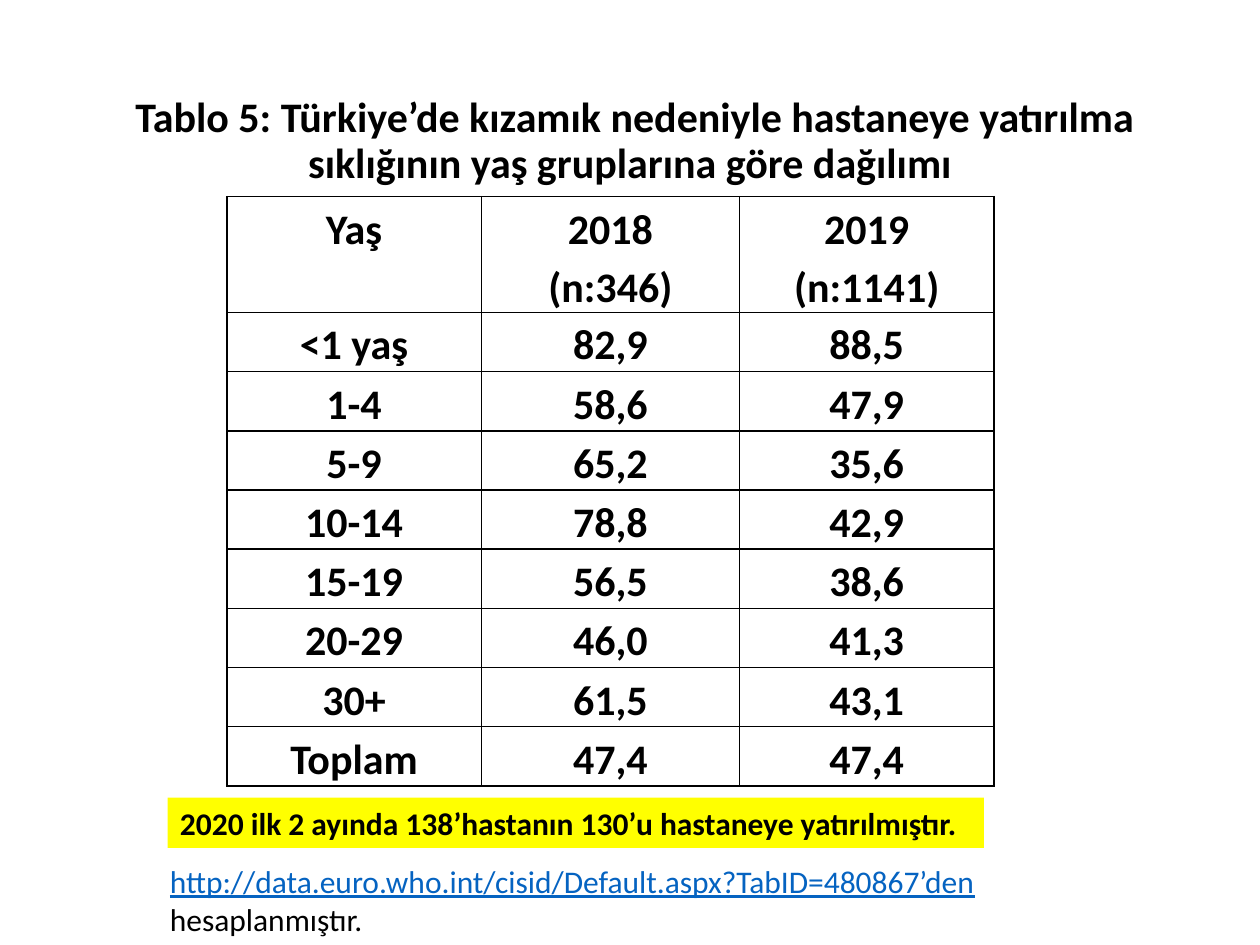
"""Builds the slide on measles hospitalisation in Türkiye by age group."""
from lxml import etree
from pptx import Presentation
from pptx.dml.color import RGBColor
from pptx.enum.shapes import MSO_SHAPE
from pptx.enum.text import MSO_ANCHOR, PP_ALIGN
from pptx.oxml.ns import qn
from pptx.util import Inches, Pt

BLACK = RGBColor(0x00, 0x00, 0x00)
YELLOW = RGBColor(0xFF, 0xFF, 0x00)
LINK = RGBColor(0x05, 0x63, 0xC1)

ROWS = [
    ("Yaş", "2018\n(n:346)", "2019\n(n:1141)"),
    ("<1 yaş", "82,9", "88,5"),
    ("1-4", "58,6", "47,9"),
    ("5-9", "65,2", "35,6"),
    ("10-14", "78,8", "42,9"),
    ("15-19", "56,5", "38,6"),
    ("20-29", "46,0", "41,3"),
    ("30+", "61,5", "43,1"),
    ("Toplam", "47,4", "47,4"),
]
COL_WIDTHS = (2.02, 2.05, 2.02)
ROW_HEIGHT = 0.47


def style(tf, size, bold, align=PP_ALIGN.LEFT, spacing=1.0):
    for p in tf.paragraphs:
        p.alignment = align
        p.line_spacing = spacing
        for r in p.runs:
            r.font.name = "Calibri"
            r.font.size = Pt(size)
            r.font.bold = bold
            r.font.color.rgb = BLACK


def add_borders(cell):
    tcPr = cell._tc.get_or_add_tcPr()
    for i, side in enumerate(("a:lnL", "a:lnR", "a:lnT", "a:lnB")):
        ln = etree.Element(qn(side), w=str(Pt(1)))
        fill = etree.SubElement(ln, qn("a:solidFill"))
        etree.SubElement(fill, qn("a:srgbClr"), val=str(BLACK))
        tcPr.insert(i, ln)


prs = Presentation()
prs.slide_width = Inches(10)
prs.slide_height = Inches(7.5)
s = prs.slides.add_slide(prs.slide_layouts[6])

title = s.shapes.add_textbox(Inches(0.69), Inches(0.4), Inches(8.62), Inches(1.45))
tf = title.text_frame
tf.word_wrap = True
tf.vertical_anchor = MSO_ANCHOR.MIDDLE
tf.text = (" Tablo 5: Türkiye’de kızamık nedeniyle hastaneye yatırılma "
           "sıklığının yaş gruplarına göre dağılımı")
style(tf, 24, True, PP_ALIGN.CENTER, 0.9)

table = s.shapes.add_table(
    len(ROWS), len(COL_WIDTHS), Inches(1.8), Inches(1.56),
    Inches(sum(COL_WIDTHS)), Inches(ROW_HEIGHT * len(ROWS))).table
table.first_row = False
table.horz_banding = False
for col, width in zip(table.columns, COL_WIDTHS):
    col.width = Inches(width)
for row, texts in zip(table.rows, ROWS):
    row.height = Inches(ROW_HEIGHT)
    for cell, text in zip(row.cells, texts):
        cell.margin_left = cell.margin_right = Inches(0.07)
        cell.margin_top = cell.margin_bottom = Inches(0)
        cell.fill.background()
        cell.text_frame.text = text
        style(cell.text_frame, 24, True, PP_ALIGN.CENTER, 1.15)
        add_borders(cell)

source = s.shapes.add_textbox(Inches(1.25), Inches(6.79), Inches(7.97), Inches(1.01))
tf = source.text_frame
tf.word_wrap = True
p = tf.paragraphs[0]
for text in ("http://data.euro.who.int/cisid/Default.aspx?TabID=480867’den",
             " hesaplanmıştır."):
    p.add_run().text = text
style(tf, 18, False)
p.runs[0].font.color.rgb = LINK
p.runs[0].font.underline = True

note = s.shapes.add_shape(MSO_SHAPE.RECTANGLE, Inches(1.33), Inches(6.33),
                          Inches(6.48), Inches(0.4))
note.shadow.inherit = False
note.fill.solid()
note.fill.fore_color.rgb = YELLOW
note.line.fill.background()
tf = note.text_frame
tf.word_wrap = False
tf.vertical_anchor = MSO_ANCHOR.TOP
tf.text = "2020 ilk 2 ayında 138’hastanın 130’u hastaneye yatırılmıştır."
style(tf, 18, True)

prs.save("out.pptx")
